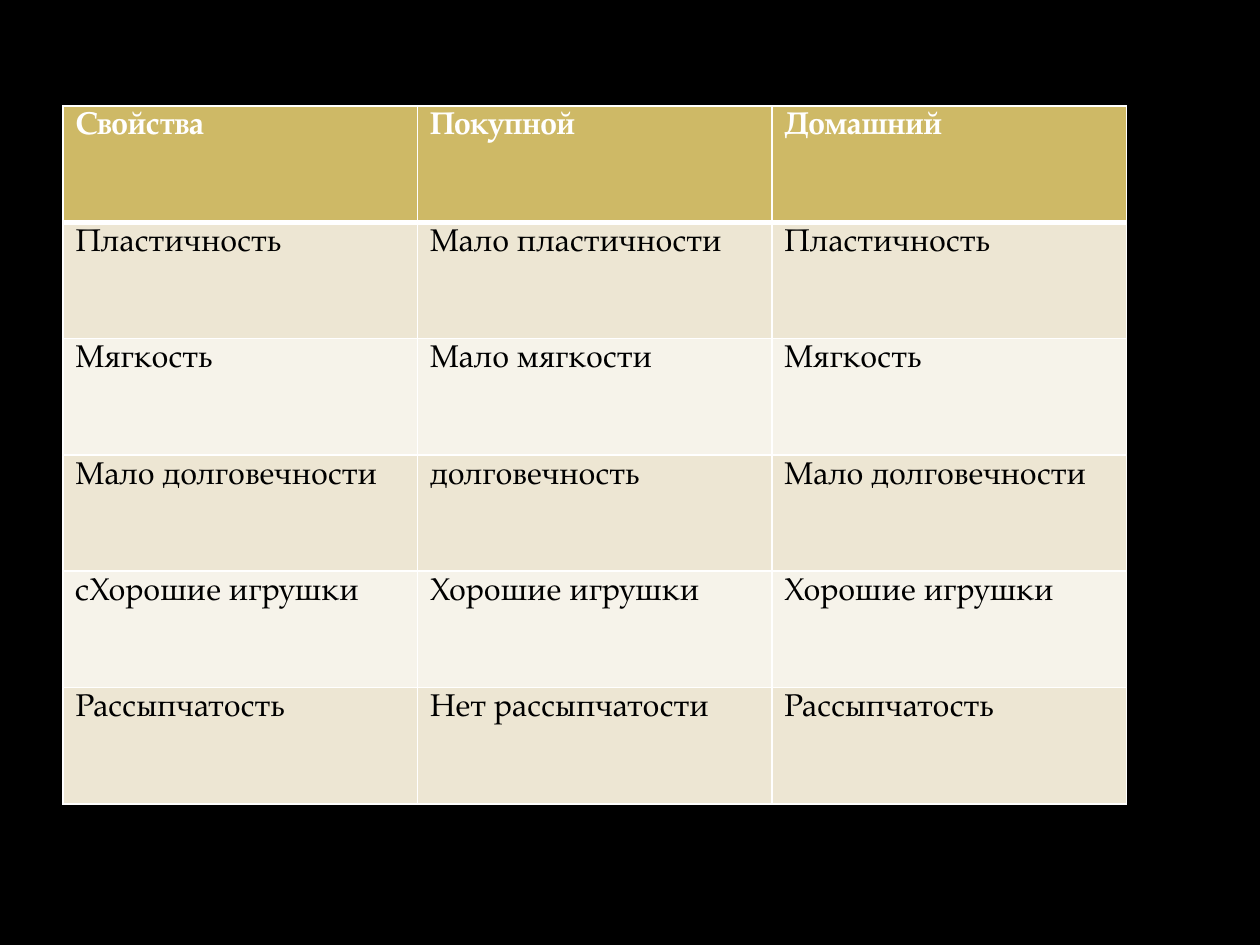
from lxml.etree import SubElement
from pptx import Presentation
from pptx.dml.color import RGBColor
from pptx.oxml.ns import qn
from pptx.util import Inches, Pt

FONT = "TeX Gyre Pagella"
COLORS = {
    "background": "000000",
    "header": "CEB966",
    "odd_row": "EDE6D3",
    "even_row": "F6F3EA",
    "border": "FFFFFF",
    "header_text": "FFFFFF",
    "body_text": "000000",
}
PROPERTIES = [
    ("Свойства", "Покупной", "Домашний"),
    ("Пластичность", "Мало пластичности", "Пластичность"),
    ("Мягкость", "Мало мягкости", "Мягкость"),
    ("Мало долговечности", "долговечность", "Мало долговечности"),
    ("cХорошие игрушки", "Хорошие игрушки", "Хорошие игрушки"),
    ("Рассыпчатость", "Нет рассыпчатости", "Рассыпчатость"),
]


def color(name):
    return RGBColor.from_string(COLORS[name])


def set_borders(cell, top, bottom):
    """Draw the four cell borders; widths are in points."""
    cell_props = cell._tc.get_or_add_tcPr()
    for side, width in (("L", 1), ("R", 1), ("T", top), ("B", bottom)):
        line = SubElement(cell_props, qn(f"a:ln{side}"), w=str(Pt(width)))
        fill = SubElement(line, qn("a:solidFill"))
        SubElement(fill, qn("a:srgbClr"), val=COLORS["border"])


def fill_cell(cell, text, row):
    is_header = row == 0
    # A thick rule separates the header from the first body row
    set_borders(cell, top=3 if row == 1 else 1, bottom=3 if is_header else 1)
    band = "header" if is_header else "odd_row" if row % 2 else "even_row"
    cell.fill.solid()
    cell.fill.fore_color.rgb = color(band)

    run = cell.text_frame.paragraphs[0].add_run()
    run.text = text
    run.font.name = FONT
    run.font.size = Pt(18)
    run.font.bold = is_header
    run.font.color.rgb = color("header_text" if is_header else "body_text")


def add_comparison(slide):
    width, height = Inches(8.44), Inches(5.54)
    comparison = slide.shapes.add_table(
        len(PROPERTIES), len(PROPERTIES[0]),
        Inches(0.5), Inches(0.84), width, height,
    ).table
    for row, texts in enumerate(PROPERTIES):
        for column, text in enumerate(texts):
            fill_cell(comparison.cell(row, column), text, row)


def main():
    presentation = Presentation()
    presentation.slide_width = Inches(10)
    presentation.slide_height = Inches(7.5)
    slide = presentation.slides.add_slide(presentation.slide_layouts[6])

    # Background
    slide.background.fill.solid()
    slide.background.fill.fore_color.rgb = color("background")

    # Comparison of shop-bought and home-made
    add_comparison(slide)
    presentation.save("out.pptx")


if __name__ == "__main__":
    main()
